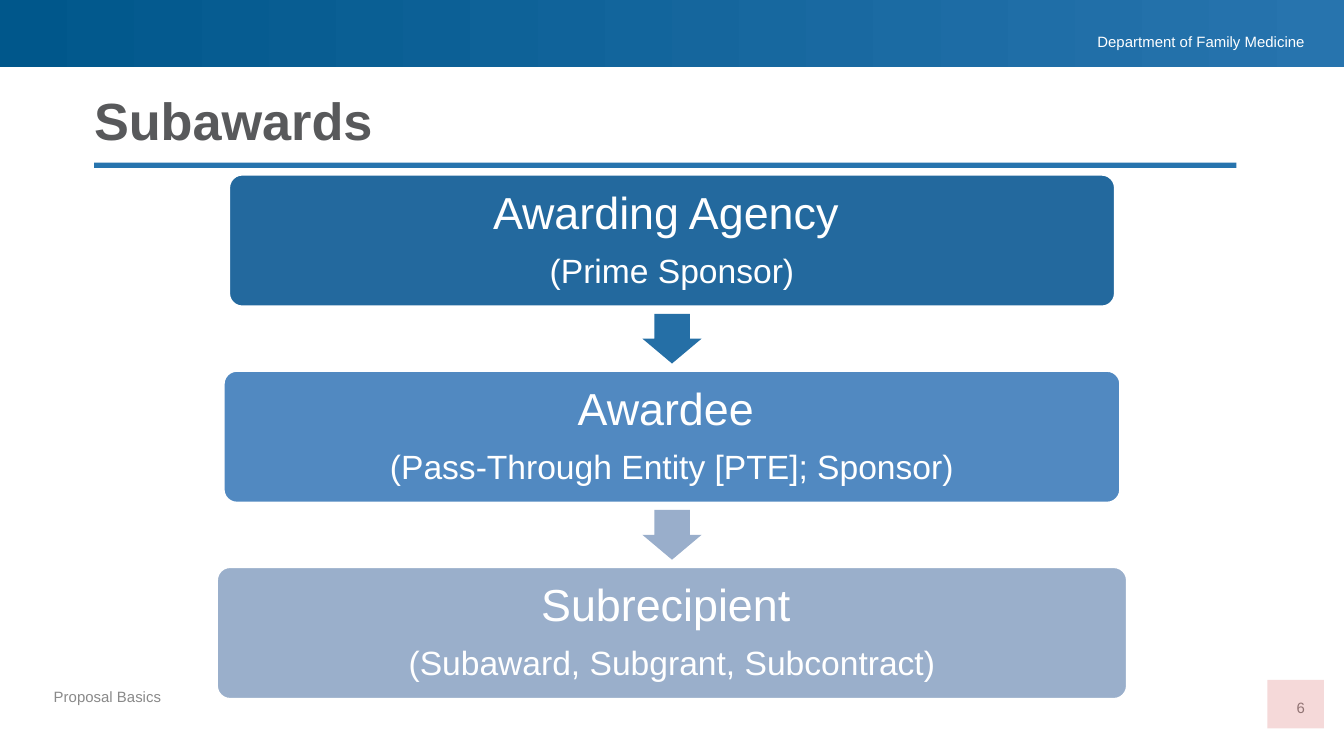
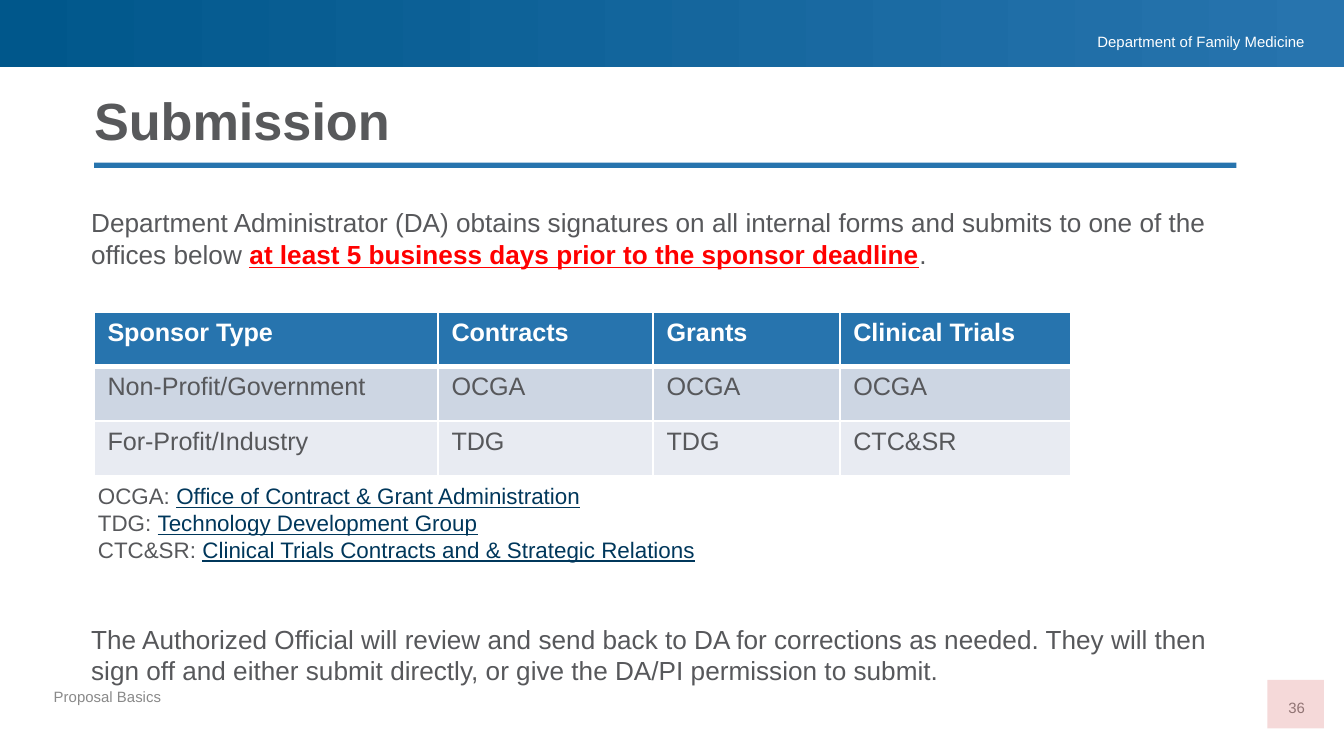
from collections import namedtuple

from lxml import etree
from pptx import Presentation
from pptx import util as u
from pptx.dml import color
from pptx.enum import shapes, text
from pptx.oxml import ns

Box = namedtuple("Box", "left top width height")

COLORS = {
    "white": "FFFFFF", "band_start": "00578B", "blue": "2774AE",
    "title": "58595B", "body": "57585B", "footer": "898989",
    "link": "00375B", "alert": "FF0000", "badge": "C00000",
    "agency": "23699E", "awardee": "5189C1", "subrecipient": "9AAFCB",
    "first_arrow": "256FA6", "second_arrow": "99AECB",
    "row_dark": "CDD6E3", "row_light": "E8EBF2",
}

FONTS = {
    "header": {"size": 8, "color": "white"},
    "footer": {"size": 8, "color": "footer"},
    "title": {"size": 28, "color": "title", "bold": True},
    "level": {"size": 24, "color": "white"},
    "role": {"size": 18, "color": "white"},
    "body": {"size": 14, "color": "body"},
    "alert": {"size": 14, "color": "alert", "bold": True, "underline": True},
    "column": {"size": 13.5, "color": "white", "bold": True},
    "cell": {"size": 13.5, "color": "body", "bold": False},
    "legend": {"size": 12, "color": "body"},
    "link": {"size": 12, "color": "link", "underline": True},
}

RIGHT = text.PP_ALIGN.RIGHT
CENTER = text.PP_ALIGN.CENTER
MIDDLE = text.MSO_ANCHOR.MIDDLE
BOTTOM = text.MSO_ANCHOR.BOTTOM
DEFAULT_INSETS = (0.1, 0.05, 0.1, 0.05)

SLIDE = Box(0, 0, 10, 10 * 9 / 16)
FLOW = Box(1.61, 1.3, 6.78, 3.9)
CONTENT = Box(0.58, 1.49, 8.62, 3.67)

LEVELS = [
    ("Awarding Agency ", "(Prime Sponsor)", 6.59, "agency", "first_arrow"),
    ("Awardee ", "(Pass-Through Entity [PTE]; Sponsor)", 6.67, "awardee", "second_arrow"),
    ("Subrecipient ", "(Subaward, Subgrant, Subcontract)", 6.77, "subrecipient", None),
]

OFFICES = [
    ["Sponsor Type", "Contracts", "Grants", "Clinical Trials"],
    ["Non-Profit/Government", "OCGA", "OCGA", "OCGA"],
    ["For-Profit/Industry", "TDG", "TDG", "CTC&SR"],
]
OFFICE_WIDTHS = [2.56, 1.6, 1.39, 1.72]
ROW_FILLS = ["blue", "row_dark", "row_light"]

OFFICE_NAMES = [
    ("OCGA: ", "Office of Contract & Grant Administration"),
    ("TDG: ", "Technology Development Group"),
    ("CTC&SR: ", "Clinical Trials Contracts and & Strategic Relations"),
]

DEADLINE = [
    ("Department Administrator (DA) obtains signatures on all internal forms "
     "and submits to one of the offices below ", "body"),
    ("at least 5 business days prior to the sponsor deadline", "alert"),
    (".", "body"),
]
REVIEW = [
    ("The Authorized Official will review and send back to DA for corrections "
     "as needed. They will then sign off and either submit directly, or give "
     "the DA/PI permission to submit.", "body"),
]


def rgb(name):
    return color.RGBColor.from_string(COLORS[name])


def lengths(box):
    return [u.Inches(value) for value in box]


def add_run(paragraph, words, style):
    run = paragraph.add_run()
    run.text = words
    formats = {"name": "Arial", **FONTS[style]}
    run.font.color.rgb = rgb(formats.pop("color"))
    formats["size"] = u.Pt(formats["size"])
    for attribute, value in formats.items():
        setattr(run.font, attribute, value)


def write(frame, paragraphs, insets=DEFAULT_INSETS, anchor=text.MSO_ANCHOR.TOP, **paragraph_formats):
    frame.word_wrap = True
    frame.vertical_anchor = anchor
    for side, inset in zip(("left", "top", "right", "bottom"), insets):
        setattr(frame, f"margin_{side}", u.Inches(inset))
    for index, runs in enumerate(paragraphs):
        paragraph = frame.add_paragraph() if index else frame.paragraphs[0]
        for attribute, value in paragraph_formats.items():
            setattr(paragraph, attribute, value)
        for words, style in runs:
            add_run(paragraph, words, style)


def add_text(slide, box, paragraphs, **formats):
    write(slide.shapes.add_textbox(*lengths(box)).text_frame, paragraphs, **formats)


def add_block(slide, preset, box, fill, outline=None):
    block = slide.shapes.add_shape(preset, *lengths(box))
    block.shadow.inherit = False
    block.fill.solid()
    block.fill.fore_color.rgb = rgb(fill)
    if outline:
        block.line.color.rgb = rgb(outline)
        block.line.width = u.Pt(1)
    else:
        block.line.fill.background()
    return block


def add_header(slide, box):
    band = add_block(slide, shapes.MSO_SHAPE.RECTANGLE, box, "blue")
    band.fill.gradient()
    band.fill.gradient_angle = 0
    for stop, name in zip(band.fill.gradient_stops, ("band_start", "blue")):
        stop.color.rgb = rgb(name)
    department = Box(box.left + 7.2, box.top + 0.23, 2.51, 0.14)
    add_text(slide, department, [[("Department of Family Medicine", "header")]],
             insets=(0.1, 0.01, 0, 0.01), alignment=RIGHT)


def add_title(slide, box, title):
    add_text(slide, box, [[(title, "title")]], insets=(0, 0, 0, 0),
             anchor=BOTTOM, line_spacing=0.9)
    rule = Box(box.left, box.top + 0.51, box.width, 0.04)
    add_block(slide, shapes.MSO_SHAPE.RECTANGLE, rule, "blue")


def add_footer(slide, box, number):
    course = Box(box.left, box.top + 0.01, 3.9, box.height)
    add_text(slide, course, [[("Proposal Basics", "footer")]],
             insets=(0, 0, 0, 0.28), line_spacing=0.9)
    right = box.left + box.width
    page = Box(right - 0.64, box.top, 0.5, box.height)
    add_text(slide, page, [[(str(number), "footer")]],
             insets=(0, 0.07, 0, 0.2), alignment=RIGHT)
    badge = add_block(slide, shapes.MSO_SHAPE.RECTANGLE,
                      Box(right - 0.42, box.top - 0.14, 0.42, 0.36), "badge")
    tint = badge.fill._xPr.find(".//" + ns.qn("a:srgbClr"))
    etree.SubElement(tint, ns.qn("a:alpha"), val="15000")


def add_page(deck, title, number):
    slide = deck.slides.add_slide(deck.slide_layouts[6])
    add_header(slide, Box(0, 0, SLIDE.width, 0.5))
    add_title(slide, Box(0.7, 0.7, 8.5, 0.43), title)
    add_footer(slide, Box(0.4, 5.2, 9.45, 0.4), number)
    return slide


def add_award_flow(slide, box):
    level_height = 0.98
    pitch = (box.height - level_height) / (len(LEVELS) - 1)
    center = box.left + box.width / 2
    for index, (level, role, width, fill, arrow_fill) in enumerate(LEVELS):
        top = box.top + index * pitch
        card = add_block(slide, shapes.MSO_SHAPE.ROUNDED_RECTANGLE,
                         Box(center - width / 2, top, width, level_height), fill, "white")
        card.adjustments[0] = 0.1
        write(card.text_frame, [[(level, "level")], [(role, "role")]],
              insets=(0.1, 0.1, 0.1, 0.1), anchor=MIDDLE,
              alignment=CENTER, line_spacing=0.9)
        card.text_frame.paragraphs[0].space_after = u.Pt(8.4)
        if arrow_fill:
            arrow = add_block(slide, shapes.MSO_SHAPE.RIGHT_ARROW,
                              Box(center - 0.185, top + 1, 0.37, 0.44), arrow_fill)
            arrow.rotation = 90
            arrow.adjustments[0] = 0.6
            arrow.adjustments[1] = 0.5


def set_borders(cell, widths):
    properties = cell._tc.get_or_add_tcPr()
    for index, (side, width) in enumerate(widths.items()):
        border = etree.Element(ns.qn(f"a:ln{side}"), w=str(u.Pt(width)))
        fill = etree.SubElement(border, ns.qn("a:solidFill"))
        etree.SubElement(fill, ns.qn("a:srgbClr"), val=COLORS["white"])
        properties.insert(index, border)


def add_office_table(slide, box):
    offices = slide.shapes.add_table(len(OFFICES), len(OFFICE_WIDTHS), *lengths(box)).table
    offices.horz_banding = False
    for column, width in zip(offices.columns, OFFICE_WIDTHS):
        column.width = u.Inches(width)
    for row, entries in enumerate(OFFICES):
        offices.rows[row].height = u.Inches(box.height / len(OFFICES))
        for column, entry in enumerate(entries):
            cell = offices.cell(row, column)
            cell.fill.solid()
            cell.fill.fore_color.rgb = rgb(ROW_FILLS[row])
            add_run(cell.text_frame.paragraphs[0], entry, "cell" if row else "column")
            set_borders(cell, {"L": 1, "R": 1, "T": 3 if row == 1 else 1,
                               "B": 1 if row else 3})


def add_submission_steps(slide, box):
    add_office_table(slide, Box(box.left + 0.12, box.top + 0.83, sum(OFFICE_WIDTHS), 1.22))
    add_text(slide, Box(box.left + 0.05, box.top + 2.05, 8.51, 0.71),
             [[(code, "legend"), (office, "link")] for code, office in OFFICE_NAMES])
    step_height = 0.57
    for top, step in ((box.top, DEADLINE), (box.top + box.height - step_height, REVIEW)):
        add_text(slide, Box(box.left, top, box.width, step_height), [step])


def main():
    deck = Presentation()
    deck.slide_width = u.Inches(SLIDE.width)
    deck.slide_height = u.Inches(SLIDE.height)
    add_award_flow(add_page(deck, "Subawards", 6), FLOW)
    add_submission_steps(add_page(deck, "Submission", 36), CONTENT)
    deck.save("out.pptx")


if __name__ == "__main__":
    main()
